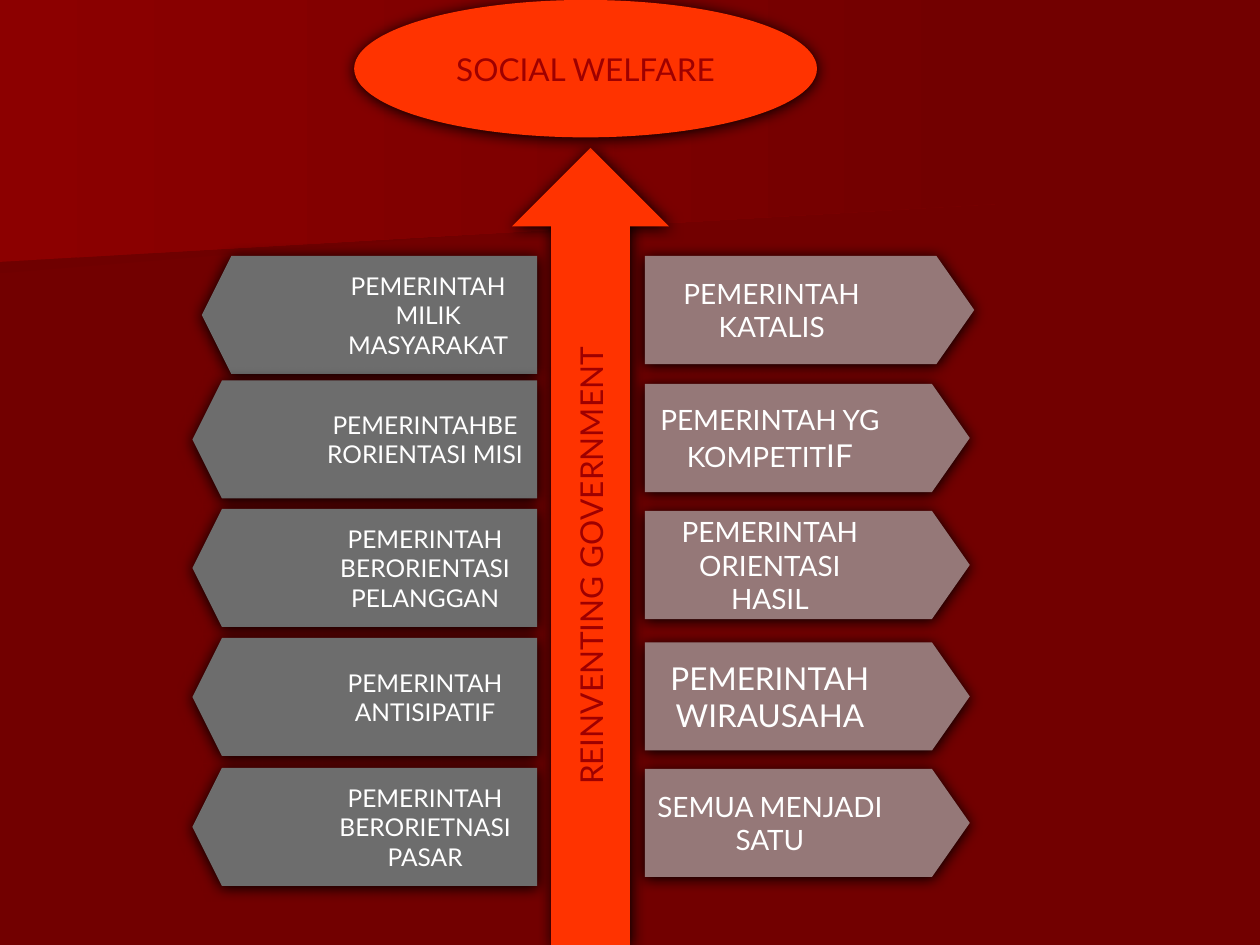
from dataclasses import dataclass

from lxml.etree import SubElement
from pptx import Presentation
from pptx.dml.color import RGBColor
from pptx.enum.shapes import MSO_SHAPE
from pptx.enum.text import MSO_ANCHOR, PP_ALIGN
from pptx.oxml.ns import qn
from pptx.shapes.autoshape import Shape
from pptx.slide import Slide
from pptx.util import Cm, Pt


@dataclass(frozen=True)
class Theme:
    font: str = "Lato"
    background: str = "720000"
    lower_band: str = "6F0000"
    upper_band: str = "8C0000"
    accent: str = "FF3300"
    accent_text: str = "9E0000"
    left_fill: str = "6D6D6D"
    right_fill: str = "957878"
    callout_text: str = "FFFFFF"
    shadow: str = "000000"
    small: int = 14
    medium: int = 16
    large: int = 18


THEME = Theme()


@dataclass(frozen=True)
class TextRun:
    text: str
    size: int


@dataclass(frozen=True)
class Box:
    """Lengths in centimetres."""
    left: float
    top: float
    width: float
    height: float


@dataclass(frozen=True)
class Callout:
    top: float
    runs: tuple[TextRun, ...]
    tip: float


@dataclass(frozen=True)
class CalloutSide:
    preset: MSO_SHAPE
    fill: str
    inner_edge: float
    height: float
    adjustments: tuple[float, ...]
    callouts: tuple[Callout, ...]


LEFT_SIDE = CalloutSide(
    MSO_SHAPE.LEFT_ARROW_CALLOUT, THEME.left_fill, 10.83, 2.38, (1, 0.5, 0.25, 0.65),
    tuple(Callout(top, (TextRun(text, THEME.small),), tip) for top, text, tip in (
        (5.16, "PEMERINTAH MILIK MASYARAKAT", 4.07),
        (7.67, "PEMERINTAHBERORIENTASI MISI", 3.88),
        (10.26, "PEMERINTAH BERORIENTASI PELANGGAN", 3.88),
        (12.86, "PEMERINTAH ANTISIPATIF", 3.88),
        (15.48, "PEMERINTAH BERORIETNASI PASAR", 3.88),
    )),
)
RIGHT_SIDE = CalloutSide(
    MSO_SHAPE.RIGHT_ARROW_CALLOUT, THEME.right_fill, 13, 2.18, (1, 0.5, 0.35, 0.77),
    (
        Callout(5.16, (TextRun("PEMERINTAH KATALIS", THEME.medium),), 19.64),
        Callout(7.74, (TextRun("PEMERINTAH YG KOMPETIT", THEME.medium),
                       TextRun("IF", THEME.large)), 19.55),
        Callout(10.3, (TextRun("PEMERINTAH ORIENTASI HASIL", THEME.medium),), 19.55),
        Callout(12.95, (TextRun("PEMERINTAH WIRAUSAHA", THEME.large),), 19.55),
        Callout(15.5, (TextRun("SEMUA MENJADI SATU", THEME.medium),), 19.55),
    ),
)


def add_background_band(slide: Slide, corners: list[tuple[float, float]], color: str) -> None:
    """Add a polygon that fades rightwards into the background."""
    points = [(Cm(x), Cm(y)) for x, y in corners]
    builder = slide.shapes.build_freeform(*points[0])
    builder.add_line_segments(points[1:], close=True)
    band = builder.convert_to_shape()
    band.shadow.inherit = False
    band.line.fill.background()
    band.fill.gradient()
    band.fill.gradient_angle = 0
    for stop, stop_color in zip(band.fill.gradient_stops, (color, THEME.background)):
        stop.color.rgb = RGBColor.from_string(stop_color)


def add_shadow(shape: Shape) -> None:
    shape.shadow.inherit = False
    effects = shape._element.spPr.find(qn("a:effectLst"))
    outer = SubElement(effects, qn("a:outerShdw"), blurRad=str(Pt(8.5)), dist=str(Pt(1)),
                       dir="5400000", algn="ctr", rotWithShape="0")
    SubElement(outer, qn("a:srgbClr"), val=THEME.shadow)


def add_labelled_shape(slide: Slide, preset: MSO_SHAPE, box: Box, fill: str,
                       runs: tuple[TextRun, ...], text_color: str) -> Shape:
    shape = slide.shapes.add_shape(
        preset, Cm(box.left), Cm(box.top), Cm(box.width), Cm(box.height))
    shape.fill.solid()
    shape.fill.fore_color.rgb = RGBColor.from_string(fill)
    shape.line.fill.background()
    add_shadow(shape)
    frame = shape.text_frame
    frame.word_wrap = True
    frame.vertical_anchor = MSO_ANCHOR.MIDDLE
    paragraph = frame.paragraphs[0]
    paragraph.alignment = PP_ALIGN.CENTER
    for text_run in runs:
        run = paragraph.add_run()
        run.text = text_run.text
        run.font.name = THEME.font
        run.font.size = Pt(text_run.size)
        run.font.color.rgb = RGBColor.from_string(text_color)
    return shape


def add_callouts(slide: Slide, side: CalloutSide) -> None:
    for callout in side.callouts:
        box = Box(min(side.inner_edge, callout.tip), callout.top,
                  abs(side.inner_edge - callout.tip), side.height)
        shape = add_labelled_shape(slide, side.preset, box, side.fill,
                                   callout.runs, THEME.callout_text)
        for index, value in enumerate(side.adjustments):
            shape.adjustments[index] = value


def main() -> None:
    presentation = Presentation()
    presentation.slide_width = Cm(25.4)
    presentation.slide_height = Cm(19.05)
    slide = presentation.slides.add_slide(presentation.slide_layouts[6])
    slide.background.fill.solid()
    slide.background.fill.fore_color.rgb = RGBColor.from_string(THEME.background)

    add_background_band(
        slide, [(0, 2.57), (19.79, 2.57), (19.76, 3.89), (0, 5.51)], THEME.lower_band)
    add_background_band(
        slide, [(0, 0), (20.12, 0), (20.12, 4.11), (0, 5.28)], THEME.upper_band)

    arrow = add_labelled_shape(
        slide, MSO_SHAPE.UP_ARROW, Box(10.32, 2.98, 3.17, 16.07), THEME.accent,
        (TextRun("REINVENTING GOVERNMENT", THEME.large),), THEME.accent_text)
    arrow.text_frame._txBody.bodyPr.set("vert", "vert270")
    add_callouts(slide, RIGHT_SIDE)
    add_callouts(slide, LEFT_SIDE)
    add_labelled_shape(
        slide, MSO_SHAPE.OVAL, Box(7.14, 0, 9.33, 2.77), THEME.accent,
        (TextRun("SOCIAL WELFARE", THEME.large),), THEME.accent_text)

    presentation.save("out.pptx")


if __name__ == "__main__":
    main()
